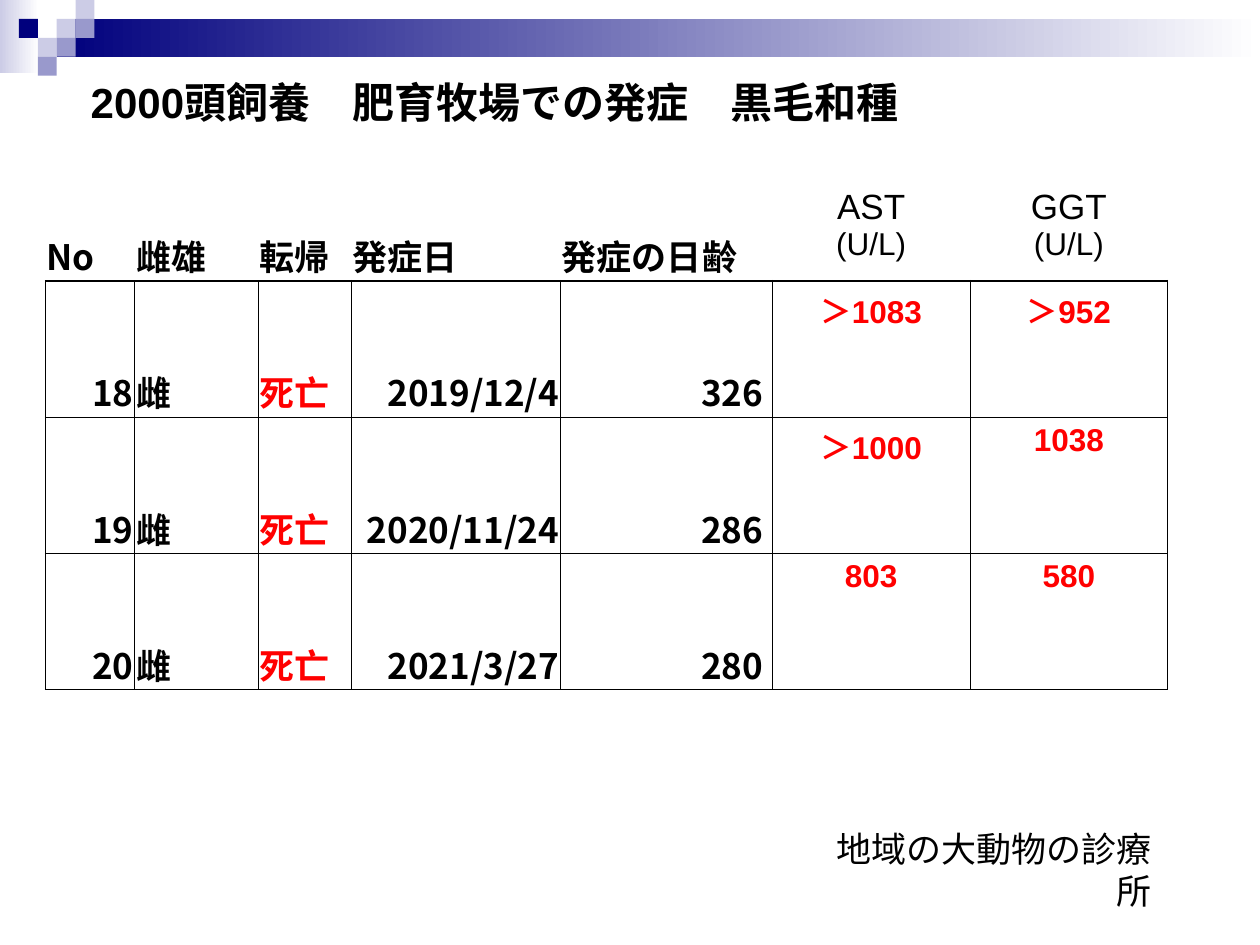
from dataclasses import dataclass
from typing import NamedTuple

from lxml import etree
from pptx import Presentation
from pptx.dml.color import RGBColor
from pptx.enum.shapes import MSO_SHAPE
from pptx.enum.text import MSO_ANCHOR, MSO_AUTO_SIZE, PP_ALIGN
from pptx.oxml.ns import qn
from pptx.util import Inches, Pt

RECT = MSO_SHAPE.RECTANGLE
TOP, BOTTOM = MSO_ANCHOR.TOP, MSO_ANCHOR.BOTTOM
LEFT, CENTER, RIGHT = PP_ALIGN.LEFT, PP_ALIGN.CENTER, PP_ALIGN.RIGHT


@dataclass(frozen=True)
class Theme:
    black: str = "000000"
    red: str = "FF0000"
    white: str = "FFFFFF"
    navy: str = "00007D"
    mid: str = "9999CC"
    pale: str = "CCCCE6"
    latin: str = "Arial"
    cjk: str = "Noto Sans CJK JP"
    title: int = 24
    body: int = 20
    small: int = 18


T = Theme()


class Style(NamedTuple):
    size: int = T.body
    font: str = T.cjk
    color: str = T.black
    bold: bool = True


class Column(NamedTuple):
    header: str
    width: float
    align: PP_ALIGN
    style: Style
    lab: bool = False


class Square(NamedTuple):
    col: int
    row: int
    color: str


UNIT = 0.15
SQUARES = (
    Square(3, 1, T.pale), Square(4, 0, T.pale), Square(4, 1, T.mid),
    Square(2, 2, T.pale), Square(1, 1, T.navy), Square(3, 2, T.mid),
    Square(2, 3, T.mid),
)

DEATH = Style(color=T.red)
LAB = Style(T.small, T.latin, T.red)
LAB_NAME = Style(font=T.latin, bold=False)
LAB_UNIT = Style(T.small, T.latin, bold=False)
COLUMNS = (
    Column("No", 0.71, RIGHT, Style()),
    Column("雌雄", 0.98, LEFT, Style()),
    Column("転帰", 0.74, LEFT, DEATH),
    Column("発症日", 1.66, RIGHT, Style()),
    Column("発症の日齢", 1.68, RIGHT, Style()),
    Column("AST", 1.57, CENTER, LAB, True),
    Column("GGT", 1.57, CENTER, LAB, True),
)
CASES = (
    ("18", "雌", "死亡", "2019/12/4", "326 ", "＞1083", "＞952"),
    ("19", "雌", "死亡", "2020/11/24", "286 ", "＞1000", "1038"),
    ("20", "雌", "死亡", "2021/3/27", "280 ", "803", "580"),
)
HEADER_HEIGHT, CASE_HEIGHT = 0.79, 1.08


def add_run(p, text: str, style: Style) -> None:
    r = p.add_run()
    r.text = text
    r.font.size = Pt(style.size)
    r.font.bold = style.bold
    r.font.name = style.font
    r.font.color.rgb = RGBColor.from_string(style.color)
    ea = etree.SubElement(r.font._element, qn("a:ea"))
    ea.set("typeface", T.cjk)


def add_rect(slide, x: float, y: float, w: float, h: float, *colors: str) -> None:
    sp = slide.shapes.add_shape(RECT, Inches(x), Inches(y), Inches(w), Inches(h))
    sp.shadow.inherit = False
    sp.line.fill.background()
    if len(colors) == 1:
        sp.fill.solid()
        sp.fill.fore_color.rgb = RGBColor.from_string(colors[0])
        return
    sp.fill.gradient()
    sp.fill.gradient_angle = 0
    for stop, color in zip(sp.fill.gradient_stops, colors):
        stop.color.rgb = RGBColor.from_string(color)


def set_border(cell, side: str, width: float) -> None:
    ln = etree.SubElement(cell._tc.get_or_add_tcPr(), qn(f"a:ln{side}"))
    if not width:
        etree.SubElement(ln, qn("a:noFill"))
        return
    ln.set("w", str(Pt(width)))
    fill = etree.SubElement(ln, qn("a:solidFill"))
    etree.SubElement(fill, qn("a:srgbClr")).set("val", T.black)


def format_cell(cell, row: int, col: int) -> None:
    rule = 1 if col < 2 else 1.5
    side = 0.5 if row else 0
    top = {0: 0, 1: rule}.get(row, 0.5)
    bottom = 0.5 if row else rule
    for name, width in zip("LRTB", (side, side, top, bottom)):
        set_border(cell, name, width)
    cell.fill.background()
    if COLUMNS[col].lab:
        cell.vertical_anchor = TOP
    else:
        cell.vertical_anchor = BOTTOM
        cell.margin_left = cell.margin_right = cell.margin_top = Inches(0.01)
        cell.margin_bottom = 0


def fill_header(cell, column: Column) -> None:
    p = cell.text_frame.paragraphs[0]
    if not column.lab:
        add_run(p, column.header, Style())
        return
    p.alignment = CENTER
    add_run(p, column.header, LAB_NAME)
    p = cell.text_frame.add_paragraph()
    p.alignment = CENTER
    add_run(p, "(U/L)", LAB_UNIT)


def add_case_table(slide) -> None:
    width = sum(column.width for column in COLUMNS)
    height = HEADER_HEIGHT + CASE_HEIGHT * len(CASES)
    table = slide.shapes.add_table(
        len(CASES) + 1, len(COLUMNS),
        Inches(0.36), Inches(1.44), Inches(width), Inches(height)).table
    table.first_row = table.horz_banding = False
    for i, row in enumerate(table.rows):
        row.height = Inches(CASE_HEIGHT if i else HEADER_HEIGHT)
    for j, column in enumerate(COLUMNS):
        table.columns[j].width = Inches(column.width)
        fill_header(table.cell(0, j), column)
        format_cell(table.cell(0, j), 0, j)
        for i, case in enumerate(CASES, 1):
            cell = table.cell(i, j)
            p = cell.text_frame.paragraphs[0]
            p.alignment = column.align
            add_run(p, case[j], column.style)
            format_cell(cell, i, j)


def add_title(slide, text: str) -> None:
    s = slide.shapes.title
    s.left, s.top, s.width, s.height = map(Inches, (0.62, 0.56, 8.38, 0.5))
    tf = s.text_frame
    tf.word_wrap = True
    tf.auto_size = MSO_AUTO_SIZE.SHAPE_TO_FIT_TEXT
    tf.vertical_anchor = TOP
    p = tf.paragraphs[0]
    p.alignment = LEFT
    add_run(p, text, Style(T.title, T.latin))


def add_clinic(slide, text: str) -> None:
    s = slide.shapes.add_textbox(Inches(6.32), Inches(6.78), Inches(2.92), Inches(0.5))
    tf = s.text_frame
    tf.word_wrap = True
    tf.vertical_anchor = BOTTOM
    p = tf.paragraphs[0]
    p.alignment = RIGHT
    add_run(p, text, Style(bold=False))


def main() -> None:
    prs = Presentation()
    prs.slide_width, prs.slide_height = Inches(10), Inches(7.5)
    slide = prs.slides.add_slide(prs.slide_layouts[5])
    add_rect(slide, 0, 0, 0.31, 0.58, T.pale, T.white)
    add_rect(slide, 0.45, 0.15, 9.55, 0.3, T.navy, T.white)
    for square in SQUARES:
        add_rect(slide, square.col * UNIT, square.row * UNIT, UNIT, UNIT, square.color)
    add_clinic(slide, "地域の大動物の診療所")
    add_title(slide, "2000頭飼養　肥育牧場での発症　黒毛和種")
    add_case_table(slide)
    prs.save("out.pptx")


if __name__ == "__main__":
    main()
